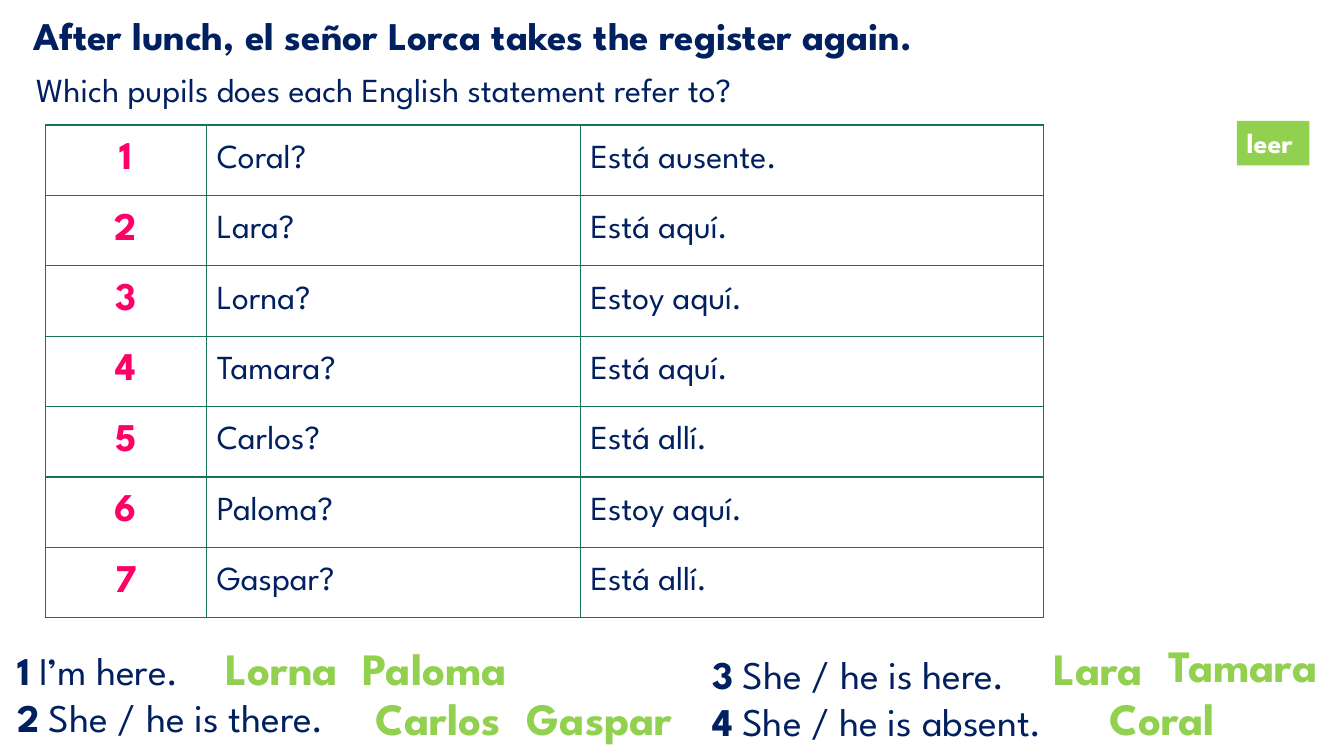
from lxml.etree import SubElement
from pptx import Presentation
from pptx.dml.color import RGBColor
from pptx.enum.shapes import MSO_SHAPE
from pptx.enum.text import MSO_ANCHOR, MSO_AUTO_SIZE, PP_ALIGN
from pptx.oxml.ns import qn
from pptx.util import Cm, Pt

COLOURS = {
    "navy": "002060",
    "green": "92D050",
    "pink": "FF0066",
    "white": "FFFFFF",
    "border": "157359",
}

REGISTER = [
    ("Coral?", "Está ausente."),
    ("Lara?", "Está aquí."),
    ("Lorna?", "Estoy aquí."),
    ("Tamara?", "Está aquí."),
    ("Carlos?", "Está allí."),
    ("Paloma?", "Estoy aquí."),
    ("Gaspar?", "Está allí."),
]

STATEMENTS = [
    ((0.18, 16.15, 9.32, 2.64), [("1", " I’m here."), ("2", " She / he is there.")]),
    ((17.7, 16.26, 10.11, 2.64), [("3", " She / he is here."), ("4", " She / he is absent.")]),
]

# Name, left, top, width
ANSWERS = [
    ("Lorna", 5.44, 16.03, 3.56),
    ("Carlos", 9.22, 17.27, 4.04),
    ("Gaspar", 13.03, 17.27, 4.6),
    ("Paloma", 8.89, 16.03, 4.72),
    ("Tamara", 29.21, 15.95, 4.65),
    ("Coral", 27.71, 17.27, 3.53),
    ("Lara", 26.29, 16.03, 2.9),
]


class RegisterPage:
    font_name = "League Spartan"

    def __init__(self, deck):
        self.page = deck.slides.add_slide(deck.slide_layouts.get_by_name("Title Only"))

    def colour(self, name):
        return RGBColor.from_string(COLOURS[name])

    def span(self, para, text, size, colour, bold=False):
        span = para.add_run()
        span.text = text
        span.font.name = self.font_name
        span.font.size = Pt(size)
        span.font.bold = bold
        span.font.color.rgb = self.colour(colour)

    def fill_frame(self, frame, lines):
        """Write lines, each a list of (text, size, colour, bold) spans."""
        frame.word_wrap = True
        frame.auto_size = MSO_AUTO_SIZE.SHAPE_TO_FIT_TEXT
        frame.vertical_anchor = MSO_ANCHOR.TOP
        for index, spans in enumerate(lines):
            para = frame.add_paragraph() if index else frame.paragraphs[0]
            para.alignment = PP_ALIGN.LEFT
            for span in spans:
                self.span(para, *span)

    def title(self, place, text):
        box = self.page.shapes.title
        box.left, box.top, box.width, box.height = map(Cm, place)
        self.fill_frame(box.text_frame, [[(text, 28, "navy", True)]])

    def text(self, place, lines):
        box = self.page.shapes.add_textbox(*map(Cm, place))
        self.fill_frame(box.text_frame, lines)

    def label(self, place, text):
        box = self.page.shapes.add_shape(MSO_SHAPE.RECTANGLE, *map(Cm, place))
        box.shadow.inherit = False
        box.fill.solid()
        box.fill.fore_color.rgb = self.colour("green")
        box.line.fill.background()
        self.fill_frame(box.text_frame, [[(text, 20, "white", True)]])

    def cell(self, cell, text, size, colour, bold, alignment):
        properties = cell._tc.get_or_add_tcPr()
        for side in ("a:lnL", "a:lnR", "a:lnT", "a:lnB"):
            line = SubElement(properties, qn(side), w=str(Pt(1)))
            solid = SubElement(line, qn("a:solidFill"))
            SubElement(solid, qn("a:srgbClr"), val=COLOURS["border"])
        cell.fill.background()
        cell.vertical_anchor = MSO_ANCHOR.MIDDLE
        para = cell.text_frame.paragraphs[0]
        para.alignment = alignment
        self.span(para, text, size, colour, bold)

    def table(self, place, widths, rows):
        """Draw rows of texts, numbering them in the first column."""
        frame = self.page.shapes.add_table(len(rows), len(widths), *map(Cm, place))
        table = frame.table
        table.first_row = table.horz_banding = False
        for column, width in zip(table.columns, widths):
            column.width = Cm(width)
        for index, texts in enumerate(rows):
            number = str(index + 1)
            self.cell(table.cell(index, 0), number, 28, "pink", True, PP_ALIGN.CENTER)
            for column, text in enumerate(texts, 1):
                self.cell(table.cell(index, column), text, 24, "navy", False, PP_ALIGN.LEFT)


def main():
    deck = Presentation()
    deck.slide_width, deck.slide_height = Cm(33.87), Cm(19.05)
    page = RegisterPage(deck)
    page.title((0.58, 0.15, 27.13, 1.45), "After lunch, el señor Lorca takes the register again.")
    page.label((31.17, 3.05, 1.83, 1.12), "leer")
    question = "Which pupils does each English statement refer to?"
    page.text((0.66, 1.6, 24.13, 1.27), [[(question, 24, "navy")]])
    page.table((1.14, 3.15, 25.15, 12.42), (4.07, 9.42, 11.66), REGISTER)
    for place, statements in STATEMENTS:
        page.text(place, [
            [(number, 28, "navy", True), (statement, 28, "navy")]
            for number, statement in statements
        ])
    for name, left, top, width in ANSWERS:
        page.text((left, top, width, 1.63), [[(name, 32, "green", True)]])
    deck.save("out.pptx")


if __name__ == "__main__":
    main()
